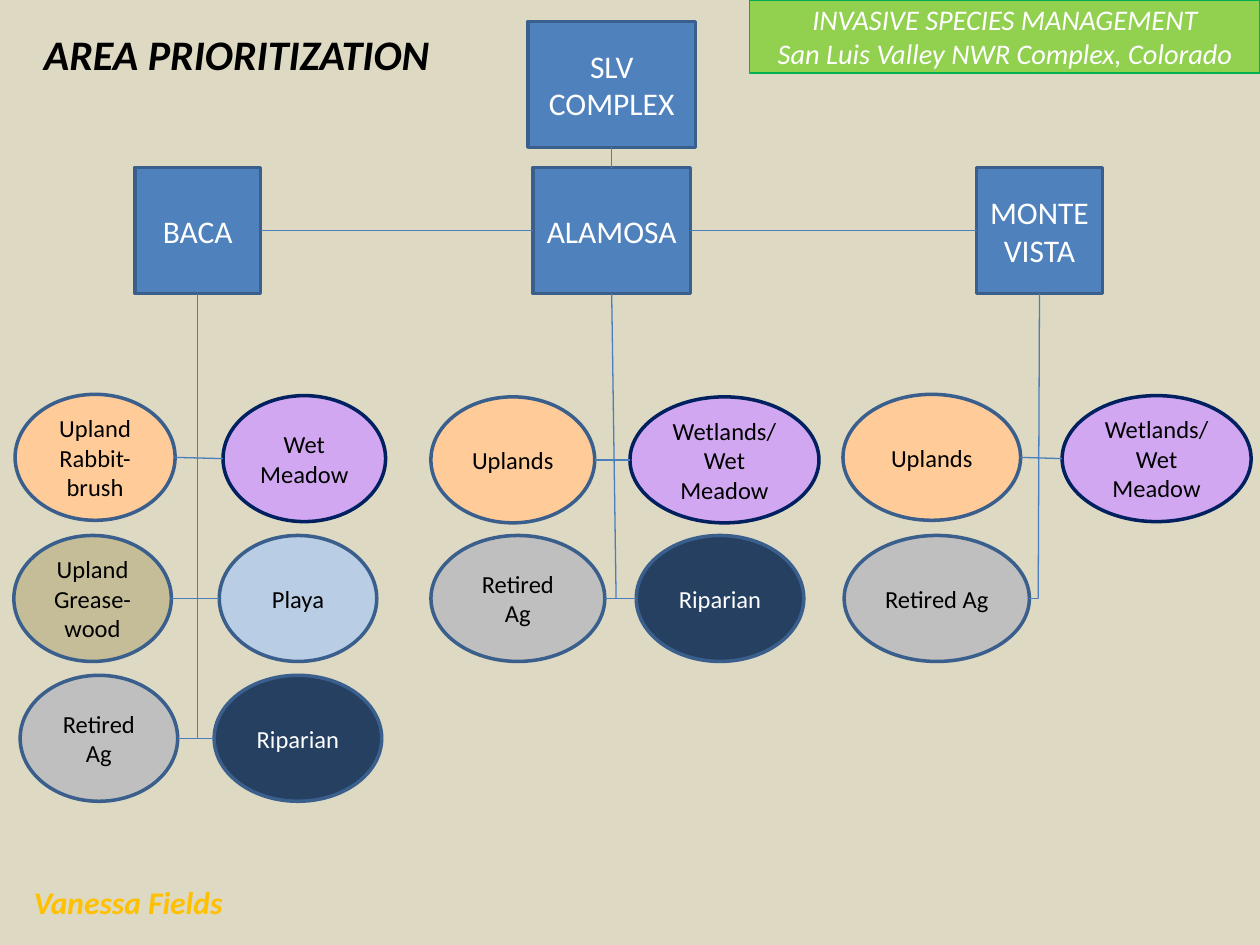
from lxml import etree
from pptx import Presentation
from pptx.dml.color import RGBColor
from pptx.enum.shapes import MSO_CONNECTOR, MSO_SHAPE
from pptx.enum.text import MSO_ANCHOR, MSO_AUTO_SIZE, PP_ALIGN
from pptx.oxml.ns import qn
from pptx.util import Inches, Pt

RECT, OVAL = MSO_SHAPE.RECTANGLE, MSO_SHAPE.OVAL
STRAIGHT = MSO_CONNECTOR.STRAIGHT
CENTER, LEFT = PP_ALIGN.CENTER, PP_ALIGN.LEFT
MIDDLE, TOP = MSO_ANCHOR.MIDDLE, MSO_ANCHOR.TOP
FIT = MSO_AUTO_SIZE.SHAPE_TO_FIT_TEXT
SIDE_TOP, SIDE_LEFT, SIDE_BOTTOM, SIDE_RIGHT = range(4)

COLORS = {
    "sand": "DDD9C3", "blue": "4F81BD", "edge": "3A5F8C", "link": "4B7EBC",
    "navy": "002060", "peach": "FFCC99", "violet": "D1A7F1", "gray": "BFBFBF",
    "olive": "C4BD97", "sky": "B9CDE5", "deep": "254061", "lime": "92D050",
    "green": "00B050", "gold": "FFC000", "white": "FFFFFF", "black": "000000",
}
WIDTH, HEIGHT = 10, 7.5
NODE_H, ROW_TOP, ROW_STEP = 1, 3.14, 1.11
UNIT_TOP = 1.33

ROOT = ("SLV COMPLEX", 4.19, 0.17, 1.33)
UNITS = [
    {"name": "BACA", "left": 1.07, "width": 1, "trunk": (1.57, 2), "rows": [
        [("Upland\nRabbit-brush", "peach", 0.12, 1.27, -0.01),
         ("Wet\nMeadow", "violet", 1.77, 1.29, 0)],
        [("Upland Grease-wood", "olive", 0.11, 1.25, 0),
         ("Playa", "sky", 1.74, 1.25, 0)],
        [("Retired Ag", "gray", 0.16, 1.25, 0),
         ("Riparian", "deep", 1.7, 1.33, 0)],
    ]},
    {"name": "ALAMOSA", "left": 4.23, "width": 1.25, "trunk": (4.89, 1), "rows": [
        [("Uplands", "peach", 3.42, 1.3, 0.01),
         ("Wetlands/\nWet Meadow", "violet", 5, 1.5, 0.01)],
        [("Retired Ag", "gray", 3.42, 1.38, 0),
         ("Riparian", "deep", 5.05, 1.33, 0)],
    ]},
    {"name": "MONTE\nVISTA", "left": 7.75, "width": 1, "trunk": (8.24, 1), "rows": [
        [("Uplands", "peach", 6.69, 1.41, -0.01),
         ("Wetlands/\nWet Meadow", "violet", 8.43, 1.5, 0)],
        [("Retired Ag", "gray", 6.7, 1.47, 0)],
    ]},
]
BANNER = "INVASIVE SPECIES MANAGEMENT\nSan Luis Valley NWR Complex, Colorado"
TITLE = "AREA PRIORITIZATION"
AUTHOR = "Vanessa Fields"


def write(sp, text, color, align, anchor, wrap=True, **font):
    tf = sp.text_frame
    tf.text = text
    tf.word_wrap = wrap
    tf.vertical_anchor = anchor
    for p in tf.paragraphs:
        p.alignment = align
        for r in p.runs:
            r.font.color.rgb = RGBColor.from_string(COLORS[color])
            for key, value in {"name": "Calibri", **font}.items():
                setattr(r.font, key, value)


def add_node(s, kind, text, box, fill, edge, color, weight=2, **font):
    sp = s.shapes.add_shape(kind, *map(Inches, box))
    sp.shadow.inherit = False
    sp.fill.solid()
    sp.fill.fore_color.rgb = RGBColor.from_string(COLORS[fill])
    sp.line.color.rgb = RGBColor.from_string(COLORS[edge])
    sp.line.width = Pt(weight)
    write(sp, text, color, CENTER, MIDDLE, **font)
    return sp


def add_box(s, text, left, top, width):
    return add_node(s, RECT, text, (left, top, width, NODE_H),
                    "blue", "edge", "white", size=Pt(18))


def add_link(s, start=(0, 0), end=(0, 0), begin_at=None, end_at=None):
    c = s.shapes.add_connector(STRAIGHT, *map(Inches, (*start, *end)))
    c.line.color.rgb = RGBColor.from_string(COLORS["link"])
    c.line.width = Pt(0.75)
    etree.SubElement(c._element.spPr, qn("a:effectLst"))
    if begin_at:
        c.begin_connect(*begin_at)
    if end_at:
        c.end_connect(*end_at)


def add_label(s, text, box, color, size, wrap):
    sp = s.shapes.add_textbox(*map(Inches, box))
    write(sp, text, color, LEFT, TOP, wrap, size=Pt(size), bold=True, italic=True)
    sp.text_frame.auto_size = FIT


def row_middle(row):
    return ROW_TOP + row * ROW_STEP + NODE_H / 2


def add_habitats(s, rows, trunk_x):
    for i, row in enumerate(rows):
        ends = []
        for text, fill, left, width, nudge in row:
            add_node(s, OVAL, text,
                     (left, ROW_TOP + i * ROW_STEP + nudge, width, NODE_H), fill,
                     "navy" if fill == "violet" else "edge",
                     "white" if fill == "deep" else "black", size=Pt(14))
            ends.append((left, left + width, row_middle(i) + nudge))
        start = ends[0][1:]
        end = (ends[1][0], ends[1][2]) if len(ends) > 1 else (trunk_x, start[1])
        add_link(s, start, end)


def main():
    prs = Presentation()
    prs.slide_width, prs.slide_height = Inches(WIDTH), Inches(HEIGHT)
    s = prs.slides.add_slide(prs.slide_layouts[6])
    s.background.fill.solid()
    s.background.fill.fore_color.rgb = RGBColor.from_string(COLORS["sand"])

    root = add_box(s, *ROOT)
    units = [add_box(s, u["name"], u["left"], UNIT_TOP, u["width"]) for u in UNITS]
    add_link(s, begin_at=(root, SIDE_BOTTOM), end_at=(units[1], SIDE_TOP))
    for a, b in zip(units, units[1:]):
        add_link(s, begin_at=(a, SIDE_RIGHT), end_at=(b, SIDE_LEFT))

    for unit, sp in zip(UNITS, units):
        x, last = unit["trunk"]
        add_link(s, end=(x, row_middle(last)), begin_at=(sp, SIDE_BOTTOM))
        add_habitats(s, unit["rows"], x)

    add_node(s, RECT, BANNER, (5.95, 0, WIDTH - 5.95, 0.58), "lime", "green",
             "white", 0.75, size=Pt(16.2), italic=True)
    add_label(s, TITLE, (0.25, 0.18, 3.29, 0.5), "black", 24, False)
    add_label(s, AUTHOR, (0.17, 6.96, 6.17, 0.4), "gold", 18, True)
    prs.save("out.pptx")


if __name__ == "__main__":
    main()
